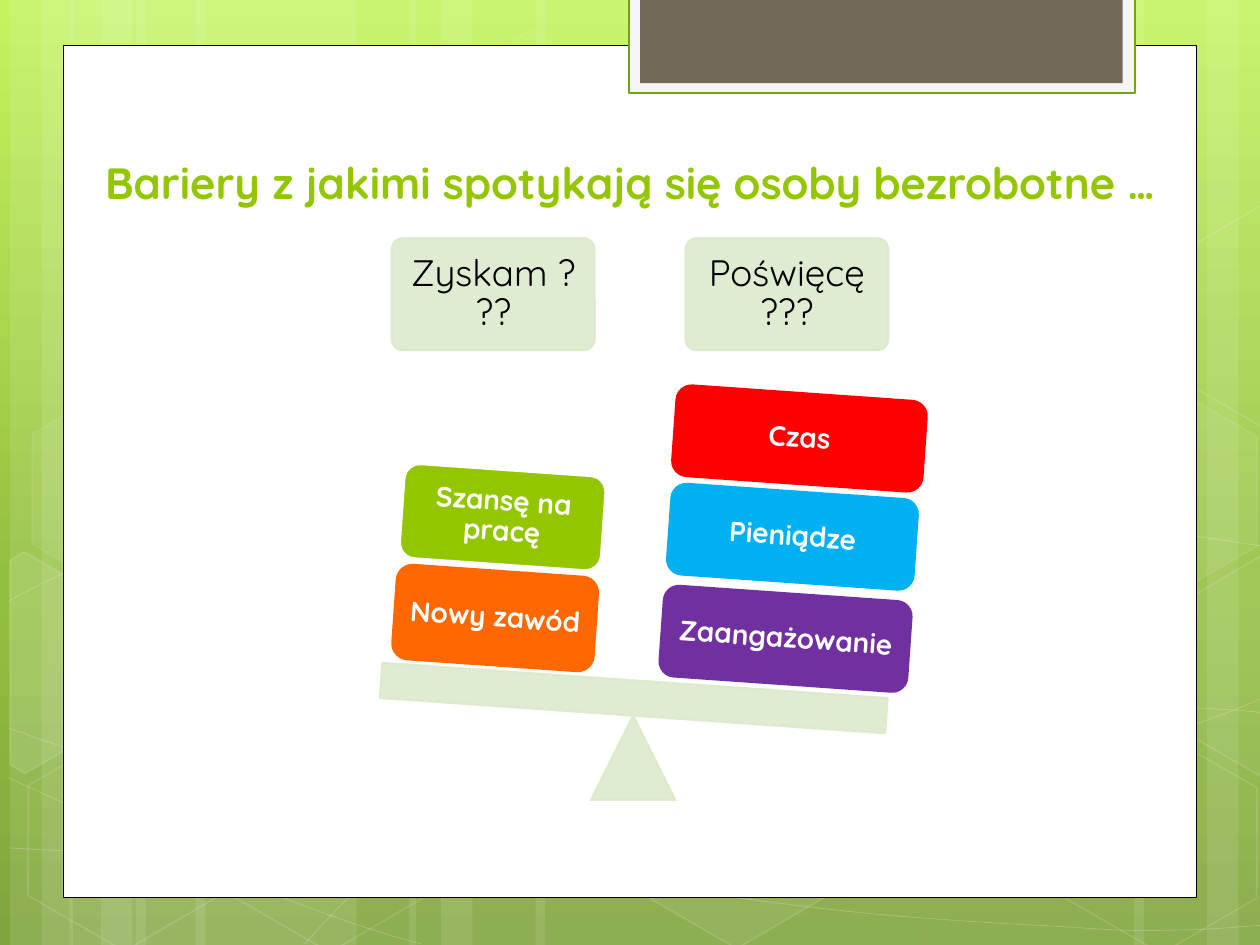
from copy import deepcopy
from lxml import etree
from pptx import Presentation
from pptx.dml.color import RGBColor
from pptx.enum import shapes, text
from pptx.oxml import ns
from pptx.util import Inches, Pt

WHITE = RGBColor(0xFF, 0xFF, 0xFF)
BLACK = RGBColor(0, 0, 0)
PALE = RGBColor(0xDC, 0xEA, 0xCC)
GREEN = RGBColor(0x94, 0xC6, 0x00)
ORANGE = RGBColor(0xFF, 0x67, 0x00)
RED = RGBColor(0xFF, 0x00, 0x00)
BLUE = RGBColor(0x00, 0xB0, 0xF0)
PURPLE = RGBColor(0x70, 0x30, 0xA0)
SMOKE = RGBColor(0xF5, 0xF5, 0xF5)
MOSS = RGBColor(0x74, 0xA5, 0x10)
BROWN = RGBColor(0x71, 0x68, 0x5A)
SKY = [(0, RGBColor(0xC3, 0xF3, 0x5F)), (0.62, RGBColor(0x93, 0xBF, 0x3F)),
       (1, RGBColor(0x81, 0xA5, 0x3E))]
FONT = "Quicksand"
TILT = 4

TITLE = "Bariery z jakimi spotykają się osoby bezrobotne …"
HEADS = [("Zyskam ???", 3.11), ("Poświęcę ???", 5.44)]
BLOCKS = [
    ("Zaangażowanie", (5.25, 4.71, 1.97, 0.72), PURPLE, PURPLE),
    ("Pieniądze", (5.31, 3.9, 1.96, 0.72), BLUE, BLUE),
    ("Czas", (5.35, 3.12, 1.99, 0.72), RED, RED),
    ("Nowy zawód", (3.13, 4.53, 1.6, 0.75), ORANGE, ORANGE),
    ("Szansę na pracę", (3.19, 3.73, 1.6, 0.75), GREEN, WHITE),
]
BANDS = [(1.08, 1.75, 0), (0.08, 0.5, 0), (0.33, 0.83, 0), (1.55, 1.75, 0),
         (0.55, 0.5, 0), (0.8, 0.83, 0), (7.33, 1.75, 180), (9.58, 0.5, 180),
         (9, 0.83, 180), (4.25, 3.08, 0), (3.25, 0.5, 0), (3.5, 0.83, 0)]
CURVES = [
    [(0.07, 6.73), (0.61, 6.76), (1.15, 6.79), (1.9, 6.78), (2.65, 6.77), (3.58, 6.75),
     (4.58, 6.65), (5.58, 6.55), (7, 6.36), (7.92, 6.17), (8.83, 5.98), (9.77, 5.68),
     (10.07, 5.51)],
    [(0.07, 4.77), (0.36, 4.61), (0.65, 4.46), (1.21, 4.31), (1.78, 4.16), (2.59, 3.94),
     (3.47, 3.87), (4.36, 3.8), (5.44, 3.79), (6.54, 3.87), (7.64, 3.95), (9.47, 4.26),
     (10.07, 4.34)],
    [(0.06, 6.17), (1.27, 6.72), (2.47, 7.27), (3.34, 7.49)],
    [(0.07, 5.78), (0.38, 5.89), (0.7, 6), (1.28, 6.16), (1.86, 6.31), (2.73, 6.56),
     (3.57, 6.73), (4.4, 6.9), (5.45, 7.08), (6.28, 7.18), (7.11, 7.29), (8, 7.33),
     (8.53, 7.36), (9.05, 7.4), (9.19, 7.38), (9.45, 7.38), (9.71, 7.37), (9.89, 7.35),
     (10.07, 7.34)],
    [(2.42, 7.49), (2.6, 7.29), (2.78, 7.09), (3.02, 6.91), (3.26, 6.73), (3.6, 6.53),
     (3.88, 6.39), (4.16, 6.25), (4.33, 6.19), (4.7, 6.09), (5.06, 5.99), (5.73, 5.85),
     (6.08, 5.78), (6.44, 5.71), (6.49, 5.71), (6.8, 5.69), (7.11, 5.66), (7.6, 5.63),
     (7.94, 5.62), (8.29, 5.61), (8.86, 5.62), (8.86, 5.62), (9.08, 5.62), (9.31, 5.62),
     (9.53, 5.62), (9.71, 5.63), (9.88, 5.64), (9.97, 5.65), (10.06, 5.66), (10.03, 5.65),
     (10.06, 5.66)],
]
HEXES = [(3.34, 0.36, 4, 8), (4.97, 5.89, 6, 12), (0.11, 5.91, None, 12),
         (0.14, 3.12, 7, 8), (1.74, 5.92, None, 12), (7.53, 4.53, 10, 12),
         (8.34, 5.93, None, 12), (8.34, 3.14, 7, 8)]
PARTS = [
    ([(0.08, 4.45), (0.19, 4.38), (0.96, 4.82), (0.95, 5.7), (0.2, 6.14), (0.08, 6.07)], 10),
    ([(9.26, 4.85), (10.01, 4.41), (10.09, 4.46), (10.09, 6.13), (10.02, 6.17),
      (9.26, 5.73)], 4),
    ([(9.26, 2.07), (10.01, 1.63), (10.1, 1.68), (10.09, 3.35), (10.02, 3.39),
      (9.26, 2.95)], None),
]

KIND = shapes.MSO_SHAPE
deck = Presentation()
deck.slide_width, deck.slide_height = Inches(10), Inches(7.5)
slide = deck.slides.add_slide(deck.slide_layouts[6])


def paint(fill, color, pct=100):
    if color is None or pct is None:
        fill.background()
        return
    fill.solid()
    fill.fore_color.rgb = color
    if pct < 100:
        tint = fill._xPr.find(".//" + ns.qn("a:srgbClr"))
        etree.SubElement(tint, ns.qn("a:alpha"), val=str(pct * 1000))


def dress(shape, color, pct=100, edge=None, width=1.25, clear=100):
    shape.shadow.inherit = False
    paint(shape.fill, color, pct)
    paint(shape.line.fill, edge, clear)
    if edge is not None:
        shape.line.width = Pt(width)
    return shape


def add(kind, box, turn=0):
    shape = slide.shapes.add_shape(kind, *map(Inches, box))
    shape.rotation = turn
    return shape


def outline(dots, close):
    dots = [(Inches(x), Inches(y)) for x, y in dots]
    pen = slide.shapes.build_freeform(*dots[0])
    pen.add_line_segments(dots[1:], close=close)
    return pen.convert_to_shape()


def bend(shape):
    lines = shape._element.findall(".//" + ns.qn("a:lnTo"))
    for i in range(0, len(lines), 3):
        curve = etree.Element(ns.qn("a:cubicBezTo"))
        lines[i].addprevious(curve)
        for line in lines[i:i + 3]:
            curve.append(line[0])
            line.getparent().remove(line)
    return shape


def write(shape, words, size, color, bold, pad, lead=0.9, anchor=text.MSO_ANCHOR.MIDDLE):
    frame = shape.text_frame
    frame.text = words
    frame.word_wrap = True
    frame.vertical_anchor = anchor
    frame.margin_left = frame.margin_right = Inches(pad)
    frame.margin_top = frame.margin_bottom = Inches(pad)
    para = frame.paragraphs[0]
    para.alignment = text.PP_ALIGN.CENTER
    para.line_spacing = lead
    font = para.runs[0].font
    font.name, font.size, font.bold = FONT, Pt(size), bold
    font.color.rgb = color


def label(box, inset, words, size, color, bold, pad, turn=0):
    left, top, width, height = box
    spot = (left + inset, top + inset, width - 2 * inset, height - 2 * inset)
    note = slide.shapes.add_textbox(*map(Inches, spot))
    note.rotation = turn
    write(note, words, size, color, bold, pad)


back = slide.background.fill
back.gradient()
back.gradient_angle = 270
stops = slide._element.find(".//" + ns.qn("a:gsLst"))
stops.insert(1, deepcopy(stops[0]))
for stop, (place, color) in zip(back.gradient_stops, SKY):
    stop.position = place
    stop.color.rgb = color

for left, width, turn in BANDS:
    dress(add(KIND.RECTANGLE, (left, 0, width, 7.5), turn), WHITE, 10)
for dots in CURVES:
    dress(bend(outline(dots, False)), None, edge=WHITE, width=0.5, clear=20)
for left, top, pct, clear in HEXES:
    cell = add(KIND.HEXAGON, (left, top, 1.75, 1.52), 30)
    cell.adjustments[0] = 0.285
    dress(cell, WHITE, pct, WHITE, 1, clear)
for dots, pct in PARTS:
    dress(outline(dots, True), WHITE, pct, WHITE, 1, 12)

dress(add(KIND.RECTANGLE, (0.5, 0.36, 9, 6.76)), WHITE, edge=BLACK, width=0.5)
dress(add(KIND.RECTANGLE, (4.99, -0.02, 4.02, 0.76)), SMOKE, edge=MOSS)
dress(add(KIND.RECTANGLE, (5.08, -0.02, 3.83, 0.68)), BROWN)

title = slide.shapes.add_textbox(*map(Inches, (0.59, 1.12, 8.82, 0.58)))
write(title, TITLE, 25, GREEN, True, 0.05, 1, text.MSO_ANCHOR.BOTTOM)

for words, left in HEADS:
    box = (left, 1.89, 1.61, 0.89)
    head = add(KIND.ROUNDED_RECTANGLE, box)
    head.adjustments[0] = 0.1
    dress(head, PALE, 90, PALE, clear=90)
    label(box, 0.025, words, 21, BLACK, False, 0.09)

dress(add(KIND.ISOSCELES_TRIANGLE, (4.69, 5.68, 0.67, 0.67)), PALE, 90, PALE, clear=90)
dress(add(KIND.RECTANGLE, (3.02, 5.4, 4.02, 0.28), TILT), PALE, 90, PALE, clear=90)
for words, box, color, edge in BLOCKS:
    dress(add(KIND.ROUNDED_RECTANGLE, box, TILT), color, edge=edge)
    label(box, 0.035, words, 16, WHITE, True, 0.07, TILT)

deck.save("out.pptx")
